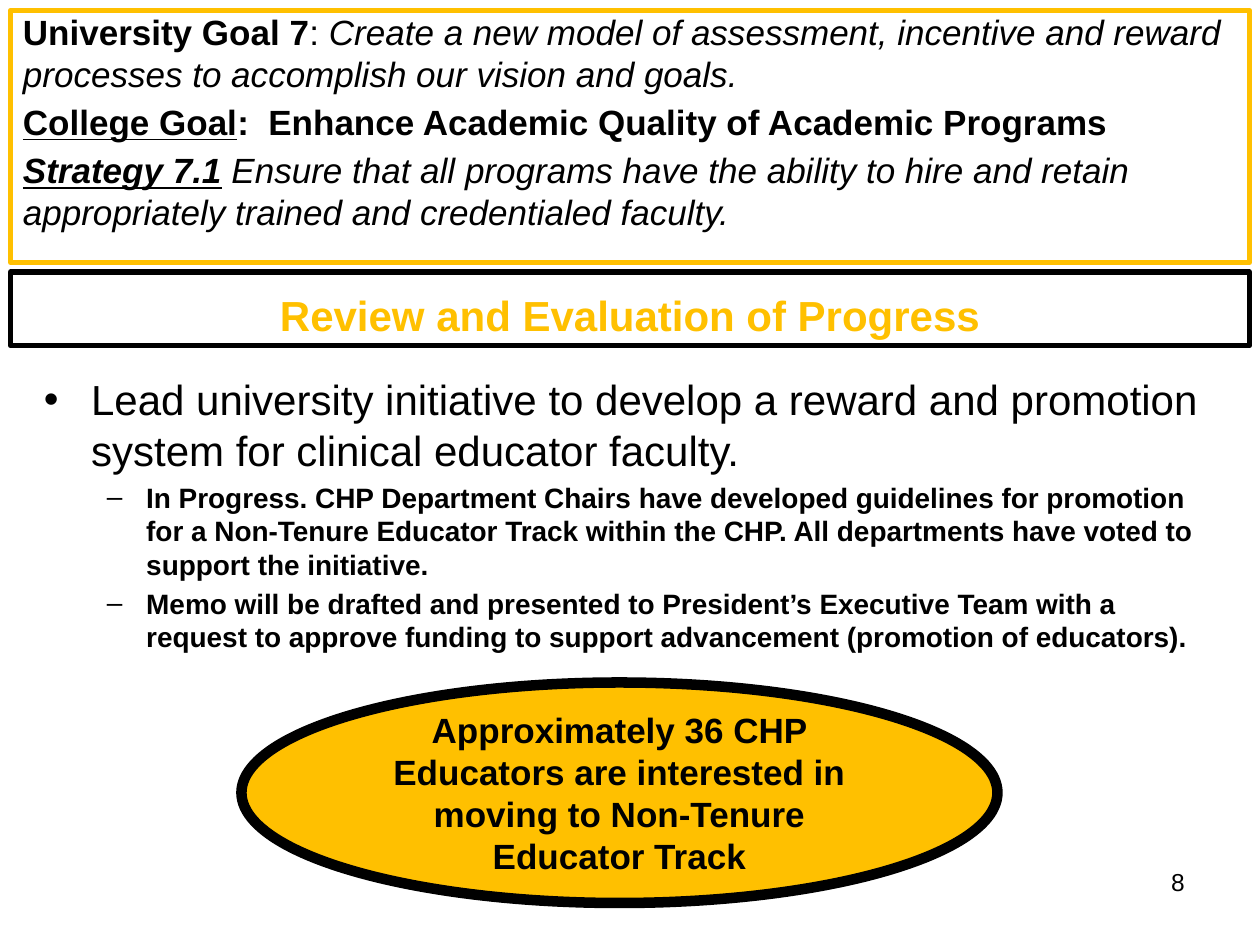
from lxml import etree
from pptx import Presentation
from pptx.dml.color import RGBColor
from pptx.enum import shapes, text
from pptx.oxml import ns
from pptx.util import Pt

COLORS = {"gold": "FFC000", "black": "000000"}
FONT = "Arial"
LEFT, TOP = text.PP_ALIGN.LEFT, text.MSO_ANCHOR.TOP
CENTER, RIGHT = text.PP_ALIGN.CENTER, text.PP_ALIGN.RIGHT
MIDDLE, BOTTOM = text.MSO_ANCHOR.MIDDLE, text.MSO_ANCHOR.BOTTOM

# Each paragraph is a list of (text, font format) runs
GOALS = [
    [("University Goal 7", {"bold": True}),
     (": ", {}),
     ("Create a new model of assessment, incentive and reward processes "
      "to accomplish our vision and goals.", {"italic": True})],
    [("College Goal", {"bold": True, "underline": True}),
     (":  Enhance Academic Quality of Academic Programs", {"bold": True})],
    [("Strategy 7.1", {"bold": True, "italic": True, "underline": True}),
     (" Ensure that all programs have the ability to hire and retain "
      "appropriately trained and credentialed faculty.", {"italic": True})],
]

# Bullet levels: character, left margin and hanging indent, font size, weight
LEVELS = [
    {"char": "•", "margin": 27, "hang": 27, "size": 24, "bold": False},
    {"char": "–", "margin": 58.5, "hang": 22.5, "size": 16, "bold": True},
]
PROGRESS = [
    (0, "Lead university initiative to develop a reward and promotion system "
        "for clinical educator faculty."),
    (1, "In Progress. CHP Department Chairs have developed guidelines for "
        "promotion for a Non-Tenure Educator Track within the CHP. All "
        "departments have voted to support the initiative."),
    (1, "Memo will be drafted and presented to President’s Executive Team "
        "with a request to approve funding to support advancement "
        "(promotion of educators)."),
]


def rgb(name):
    return RGBColor.from_string(COLORS[name])


def set_frame(sp, anchor):
    tf = sp.text_frame
    tf.word_wrap = True
    tf.vertical_anchor = anchor
    return tf


def add_panel(s, kind, box, line, width, fill=None, anchor=MIDDLE):
    sp = s.shapes.add_shape(kind, *map(Pt, box))
    sp.shadow.inherit = False
    if fill:
        sp.fill.solid()
        sp.fill.fore_color.rgb = rgb(fill)
    else:
        sp.fill.background()
    sp.line.color.rgb = rgb(line)
    sp.line.width = Pt(width)
    return set_frame(sp, anchor)


def add_textbox(s, box):
    return set_frame(s.shapes.add_textbox(*map(Pt, box)), TOP)


def write(tf, runs, size, align=LEFT, before=0, color="black"):
    """Fill the empty first paragraph, or append another one."""
    p = tf.paragraphs[0]
    if p.runs:
        p = tf.add_paragraph()
    p.alignment = align
    p.space_before = Pt(before)
    for words, formats in runs:
        r = p.add_run()
        r.text = words
        r.font.color.rgb = rgb(color)
        values = {"name": FONT, "size": Pt(size), "bold": False, **formats}
        for key, value in values.items():
            setattr(r.font, key, value)
    return p


def add_bullet(tf, level, words):
    style = LEVELS[level]
    size = style["size"]
    p = write(tf, [(words, {"bold": style["bold"]})], size, before=size * 0.2)
    p.level = level
    pPr = p._p.get_or_add_pPr()
    pPr.set("marL", str(Pt(style["margin"])))
    pPr.set("indent", str(-Pt(style["hang"])))
    etree.SubElement(pPr, ns.qn("a:buFont")).set("typeface", FONT)
    etree.SubElement(pPr, ns.qn("a:buChar")).set("char", style["char"])


def main():
    prs = Presentation()
    prs.slide_width, prs.slide_height = Pt(720), Pt(540)
    s = prs.slides.add_slide(prs.slide_layouts[6])
    rect, oval = shapes.MSO_SHAPE.RECTANGLE, shapes.MSO_SHAPE.OVAL

    # Goals and strategy
    tf = add_panel(s, rect, (6, 6, 708, 144), "gold", 3, anchor=TOP)
    tf.margin_top = 0
    for i, runs in enumerate(GOALS):
        write(tf, runs, 20, before=3.5 if i else 0)

    # Section heading
    tf = add_panel(s, rect, (6, 155.5, 708, 42), "black", 3, anchor=BOTTOM)
    write(tf, [("Review and Evaluation of Progress", {"bold": True})], 24,
          CENTER, before=4.8, color="gold")

    # Progress bullets
    tf = add_textbox(s, (18, 210, 684, 174))
    for level, words in PROGRESS:
        add_bullet(tf, level, words)

    # Page number
    write(add_textbox(s, (516, 492, 168, 37.5)), [("8", {})], 14, RIGHT)

    # Callout
    tf = add_panel(s, oval, (138, 390, 432, 126), "black", 6, fill="gold")
    write(tf, [("Approximately 36 CHP Educators are interested in moving to "
                "Non-Tenure Educator Track", {"bold": True})], 20, CENTER)

    prs.save("out.pptx")


if __name__ == "__main__":
    main()
